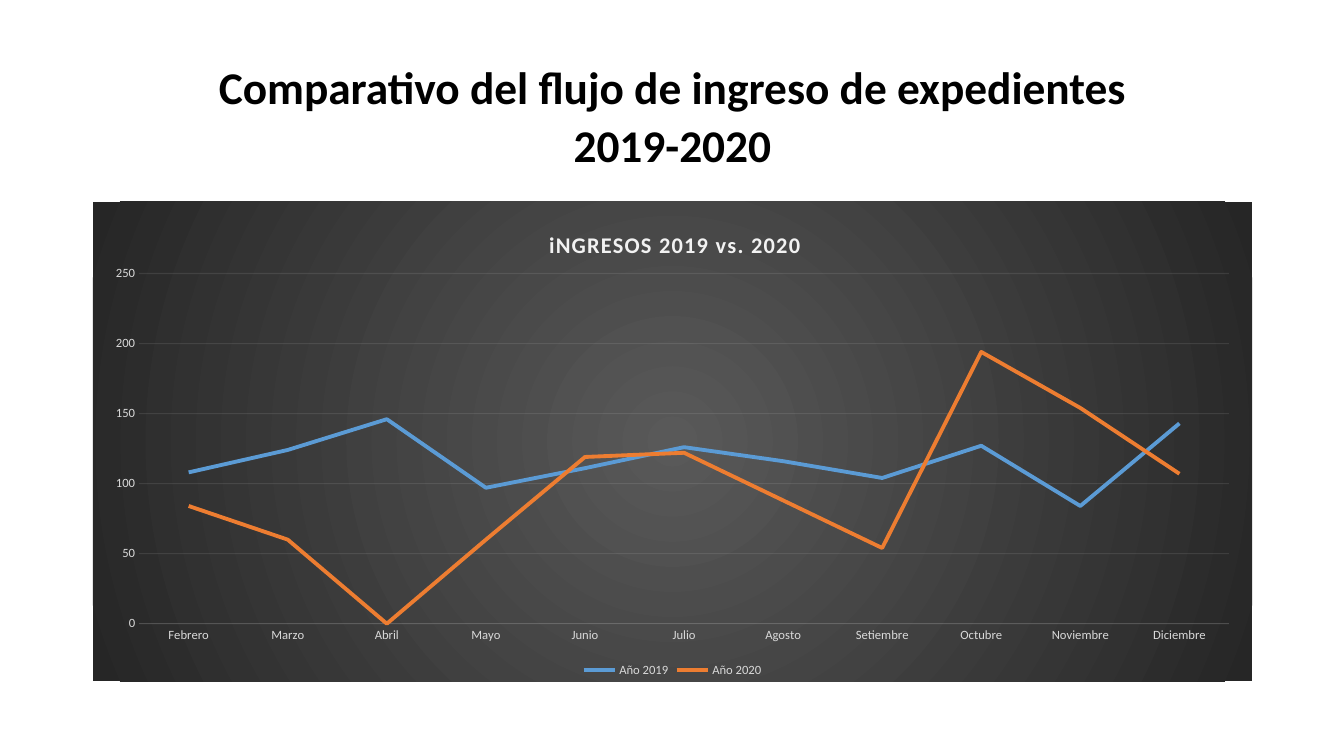
from pptx import Presentation
from pptx import util as u
from pptx.chart.data import CategoryChartData
from pptx.dml.color import RGBColor
from pptx.enum import chart as kinds, text
from pptx.oxml import parse_xml
from pptx.oxml.ns import nsdecls, qn

FONT = "Calibri"
MONTHS = ["Febrero", "Marzo", "Abril", "Mayo", "Junio", "Julio", "Agosto",
          "Setiembre", "Octubre", "Noviembre", "Diciembre"]
INTAKE = {
    "Año 2019": ("5B9BD5", [108, 124, 146, 97, 111, 126, 116, 104, 127, 84, 143]),
    "Año 2020": ("ED7D31", [84, 60, 0, 60, 119, 122, 88, 54, 194, 154, 107]),
}


def color(value):
    return RGBColor.from_string(value)


def style(target, **values):
    for name, value in values.items():
        setattr(target, name, value)


def style_font(font, size, shade, bold=False):
    style(font, name=FONT, size=u.Pt(size), bold=bold)
    font.color.rgb = color(shade)


def faint_line(line):
    """Thin light line at 10 % opacity."""
    line.width = u.Pt(0.75)
    line.fill.solid()
    line.fill.fore_color.rgb = color("F2F2F2")
    for shade in line._get_or_add_ln().iter(qn("a:srgbClr")):
        shade.append(parse_xml(f'<a:alpha {nsdecls("a")} val="10000"/>'))


def set_layout(parent, inner=False, **fractions):
    """Place a chart part by fractions of the chart area."""
    target = '<c:layoutTarget val="inner"/>' if inner else ""
    modes = "".join(f'<c:{key}Mode val="edge"/>' for key in "xy")
    sizes = "".join(f'<c:{key} val="{value}"/>' for key, value in fractions.items())
    layout = parse_xml(f'<c:layout {nsdecls("c")}><c:manualLayout>'
                       f'{target}{modes}{sizes}</c:manualLayout></c:layout>')
    present = parent.find(qn("c:layout"))
    if present is not None:
        parent.replace(present, layout)
    else:
        parent.insert(0, layout)


def radial_background(chart, center, edge):
    stops = "".join(f'<a:gs pos="{pos}"><a:srgbClr val="{shade}"/></a:gs>'
                    for pos, shade in ((0, center), (100000, edge)))
    fill = parse_xml(
        f'<c:spPr {nsdecls("c", "a")}><a:gradFill><a:gsLst>{stops}</a:gsLst>'
        '<a:path path="circle"><a:fillToRect l="50000" t="50000" r="50000" b="50000"/>'
        '</a:path></a:gradFill><a:ln><a:noFill/></a:ln></c:spPr>')
    chart.element.find(qn("c:txPr")).addprevious(fill)


def add_heading(page, left, top, width, height):
    box = page.shapes.add_textbox(*map(u.Inches, (left, top, width, height)))
    style(box.text_frame, word_wrap=True, vertical_anchor=text.MSO_ANCHOR.MIDDLE)
    para = box.text_frame.paragraphs[0]
    style(para, text="Comparativo del flujo de ingreso de expedientes\v2019-2020",
          alignment=text.PP_ALIGN.CENTER, line_spacing=1.07)
    for span in para.runs:
        style_font(span.font, 32.4, "000000", bold=True)


def add_intake_chart(page, left, top, width, height):
    data = CategoryChartData()
    data.categories = MONTHS
    for name, (_, values) in INTAKE.items():
        data.add_series(name, values)
    frame = page.shapes.add_chart(kinds.XL_CHART_TYPE.LINE,
                                  *map(u.Inches, (left, top, width, height)), data)
    chart = frame.chart
    style_font(chart.font, 10, "000000")
    radial_background(chart, "595959", "262626")

    # Chart title
    chart.has_title = True
    para = chart.chart_title.text_frame.paragraphs[0]
    span = para.add_run()
    span.text = "iNGRESOS 2019 vs. 2020"
    style_font(span.font, 16, "F2F2F2", bold=True)
    span.font._element.set("spc", "100")
    set_layout(chart.chart_title._element, x=0.39, y=0.05)

    # Plot and series
    plot = chart.plots[0]
    plot.vary_by_categories = False
    set_layout(chart.element.find(".//" + qn("c:plotArea")), inner=True,
               x=0.04, y=0.15, w=0.94, h=0.73)
    for series, (shade, _) in zip(plot.series, INTAKE.values()):
        series.smooth = False
        series.marker.style = kinds.XL_MARKER_STYLE.NONE
        series.format.line.width = u.Pt(2.75)
        series.format.line.color.rgb = color(shade)

    # Axes
    for axis in (chart.category_axis, chart.value_axis):
        style(axis, major_tick_mark=kinds.XL_TICK_MARK.NONE,
              minor_tick_mark=kinds.XL_TICK_MARK.NONE)
        style_font(axis.tick_labels.font, 9, "D9D9D9")
    faint_line(chart.category_axis.format.line)
    style(chart.value_axis, minimum_scale=0, maximum_scale=250, major_unit=50,
          has_major_gridlines=True)
    faint_line(chart.value_axis.major_gridlines.format.line)
    chart.value_axis.format.line.fill.background()

    # Legend
    chart.has_legend = True
    style(chart.legend, position=kinds.XL_LEGEND_POSITION.BOTTOM, include_in_layout=False)
    style_font(chart.legend.font, 9, "D9D9D9")


def main():
    deck = Presentation()
    style(deck, slide_width=u.Inches(13.33), slide_height=u.Inches(7.5))
    page = deck.slides.add_slide(deck.slide_layouts[6])
    add_heading(page, 0.92, 0.4, 11.5, 1.45)
    add_intake_chart(page, 0.92, 2, 11.5, 4.76)
    deck.save("out.pptx")


if __name__ == "__main__":
    main()
